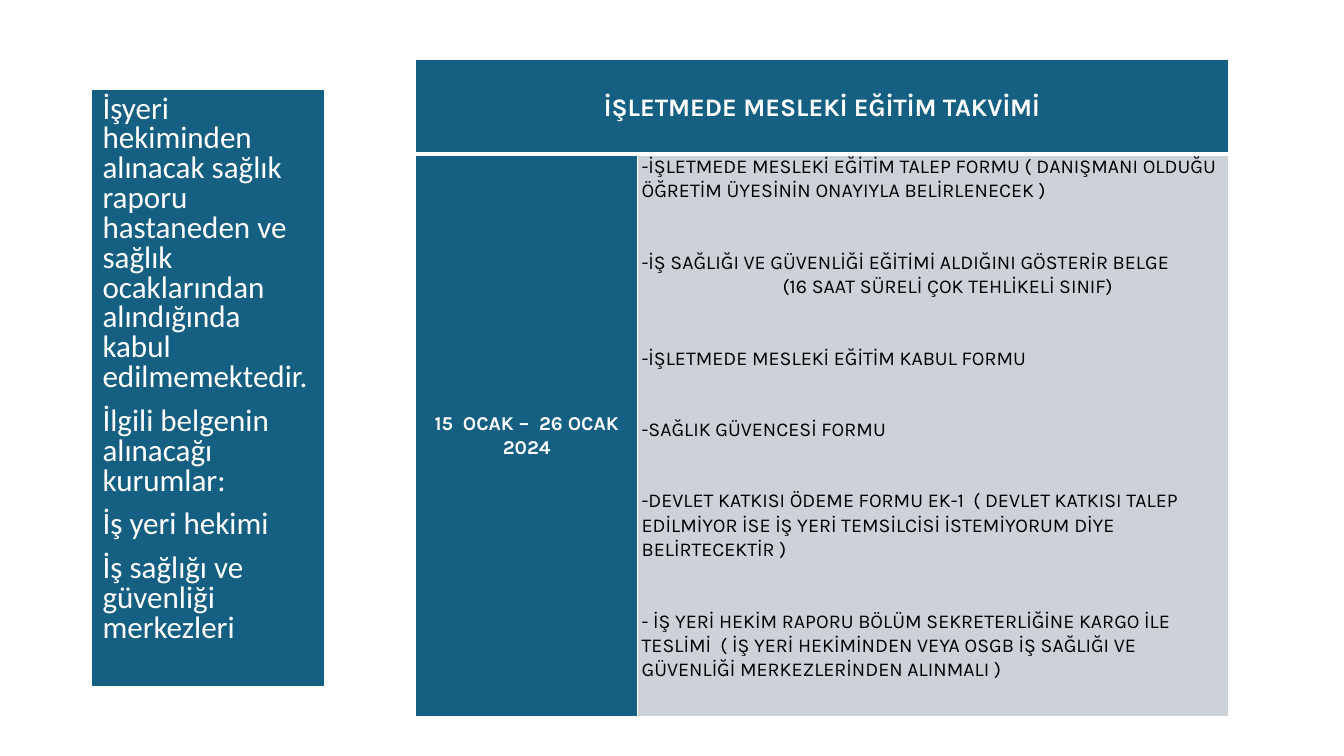
from pptx import Presentation, util as u
from pptx.dml.color import RGBColor
from pptx.enum import text
from pptx.oxml import parse_xml
from pptx.oxml.ns import nsdecls

COLORS = {"blue": "156082", "grey": "CCD2D8", "white": "FFFFFF", "black": "000000"}

HEALTH_NOTES = [
    "İşyeri hekiminden alınacak sağlık raporu hastaneden ve sağlık ocaklarından alındığında kabul edilmemektedir.",
    "İlgili belgenin alınacağı kurumlar:",
    "İş yeri hekimi",
    "İş sağlığı ve güvenliği merkezleri",
]
CALENDAR_TITLE = "İŞLETMEDE MESLEKİ EĞİTİM TAKVİMİ"
DATES = "15  OCAK –  26 OCAK 2024"
GAP = 33.5
DOCUMENTS = [
    ("-İŞLETMEDE MESLEKİ EĞİTİM TALEP FORMU ( DANIŞMANI OLDUĞU ÖĞRETİM ÜYESİNİN ONAYIYLA BELİRLENECEK )", 0, GAP),
    ("-İŞ SAĞLIĞI VE GÜVENLİĞİ EĞİTİMİ ALDIĞINI GÖSTERİR BELGE", 0, 0),
    ("(16 SAAT SÜRELİ ÇOK TEHLİKELİ SINIF)", 3.55, GAP),
    ("-İŞLETMEDE MESLEKİ EĞİTİM KABUL FORMU", 0, GAP),
    ("-SAĞLIK GÜVENCESİ FORMU", 0, GAP),
    ("-DEVLET KATKISI ÖDEME FORMU EK-1  ( DEVLET KATKISI TALEP EDİLMİYOR İSE İŞ YERİ TEMSİLCİSİ İSTEMİYORUM DİYE BELİRTECEKTİR )", 0, GAP),
    ("- İŞ YERİ HEKİM RAPORU BÖLÜM SEKRETERLİĞİNE KARGO İLE TESLİMİ  ( İŞ YERİ HEKİMİNDEN VEYA OSGB İŞ SAĞLIĞI VE GÜVENLİĞİ MERKEZLERİNDEN ALINMALI )", 0, 8),
]

COLUMN_WIDTHS = [5.59, 14.88]
ROW_HEIGHTS = [2.38, 14.17]
NOTES_BOX = {"left": u.Cm(2.33), "top": u.Cm(2.27), "width": u.Cm(5.82), "height": u.Cm(15)}
CELL_FORMAT = {"margin_left": u.Cm(0.1), "margin_right": u.Cm(0.1), "margin_top": 0, "margin_bottom": 0}
NOTE_FORMAT = {"line_spacing": 0.8, "space_before": u.Pt(10), "space_after": u.Pt(0)}
CENTERED = {"alignment": text.PP_ALIGN.CENTER, "line_spacing": 1.07, "space_after": u.Pt(8)}


def color(name):
    return RGBColor.from_string(COLORS[name])


def apply(target, values):
    for name, value in values.items():
        setattr(target, name, value)


def paint(target, name):
    target.fill.solid()
    target.fill.fore_color.rgb = color(name)


def write(frame, lines, font, ink):
    for number, (words, layout) in enumerate(lines):
        para = frame.paragraphs[0] if number == 0 else frame.add_paragraph()
        apply(para, layout)
        span = para.add_run()
        span.text = words
        apply(span.font, font)
        span.font.color.rgb = color(ink)


def add_borders(cell, widths):
    properties = cell._tc.get_or_add_tcPr()
    for number, (side, points) in enumerate(widths.items()):
        properties.insert(number, parse_xml(
            f'<a:{side} {nsdecls("a")} w="{u.Pt(points)}"><a:solidFill>'
            f'<a:srgbClr val="{COLORS["white"]}"/></a:solidFill></a:{side}>'))


def add_calendar(page):
    frame = page.shapes.add_table(2, 2, u.Cm(10.48), u.Cm(1.5),
                                  u.Cm(sum(COLUMN_WIDTHS)), u.Cm(sum(ROW_HEIGHTS)))
    table = frame.table
    for column, width in zip(table.columns, COLUMN_WIDTHS):
        column.width = u.Cm(width)
    for row, height in zip(table.rows, ROW_HEIGHTS):
        row.height = u.Cm(height)
    for row in range(2):
        for column in range(2):
            cell = table.cell(row, column)
            apply(cell, CELL_FORMAT)
            paint(cell, "grey" if row and column else "blue")
            add_borders(cell, {"lnL": 1, "lnR": 1, "lnT": 3 if row else 1, "lnB": 1 if row else 3})
    header, dates, documents = table.cell(0, 0), table.cell(1, 0), table.cell(1, 1)
    header.merge(table.cell(0, 1))
    for cell, words, size in [(header, CALENDAR_TITLE, 18), (dates, DATES, 14)]:
        cell.vertical_anchor = text.MSO_ANCHOR.MIDDLE
        write(cell.text_frame, [(words, CENTERED)],
              {"name": "Karla", "size": u.Pt(size), "bold": True}, "white")
    documents.vertical_anchor = text.MSO_ANCHOR.TOP
    lines = [(words, {"line_spacing": 1.07, "space_after": u.Pt(after)}) for words, _, after in DOCUMENTS]
    write(documents.text_frame, lines, {"name": "Karla", "size": u.Pt(14), "bold": False}, "black")
    for para, (_, indent, _) in zip(documents.text_frame.paragraphs, DOCUMENTS):
        para._p.get_or_add_pPr().set("marL", str(u.Cm(indent)))


def add_notes(page):
    box = page.placeholders[1]
    apply(box, NOTES_BOX)
    paint(box, "blue")
    box.line.color.rgb = color("blue")
    box.line.width = u.Pt(0.75)
    apply(box.text_frame, {"word_wrap": True, "auto_size": text.MSO_AUTO_SIZE.NONE,
                           "vertical_anchor": text.MSO_ANCHOR.TOP})
    write(box.text_frame, [(note, NOTE_FORMAT) for note in HEALTH_NOTES],
          {"name": "Calibri", "size": u.Pt(22.2)}, "white")
    for para in box.text_frame.paragraphs:
        properties = para._p.get_or_add_pPr()
        properties.set("marL", "0")
        properties.set("indent", "0")
        properties.append(parse_xml(f'<a:buNone {nsdecls("a")}/>'))


def main():
    deck = Presentation()
    apply(deck, {"slide_width": u.Cm(33.87), "slide_height": u.Cm(19.05)})
    page = deck.slides.add_slide(deck.slide_layouts[1])
    title = page.shapes.title.element
    title.getparent().remove(title)
    add_calendar(page)
    add_notes(page)
    deck.save("out.pptx")


if __name__ == "__main__":
    main()
